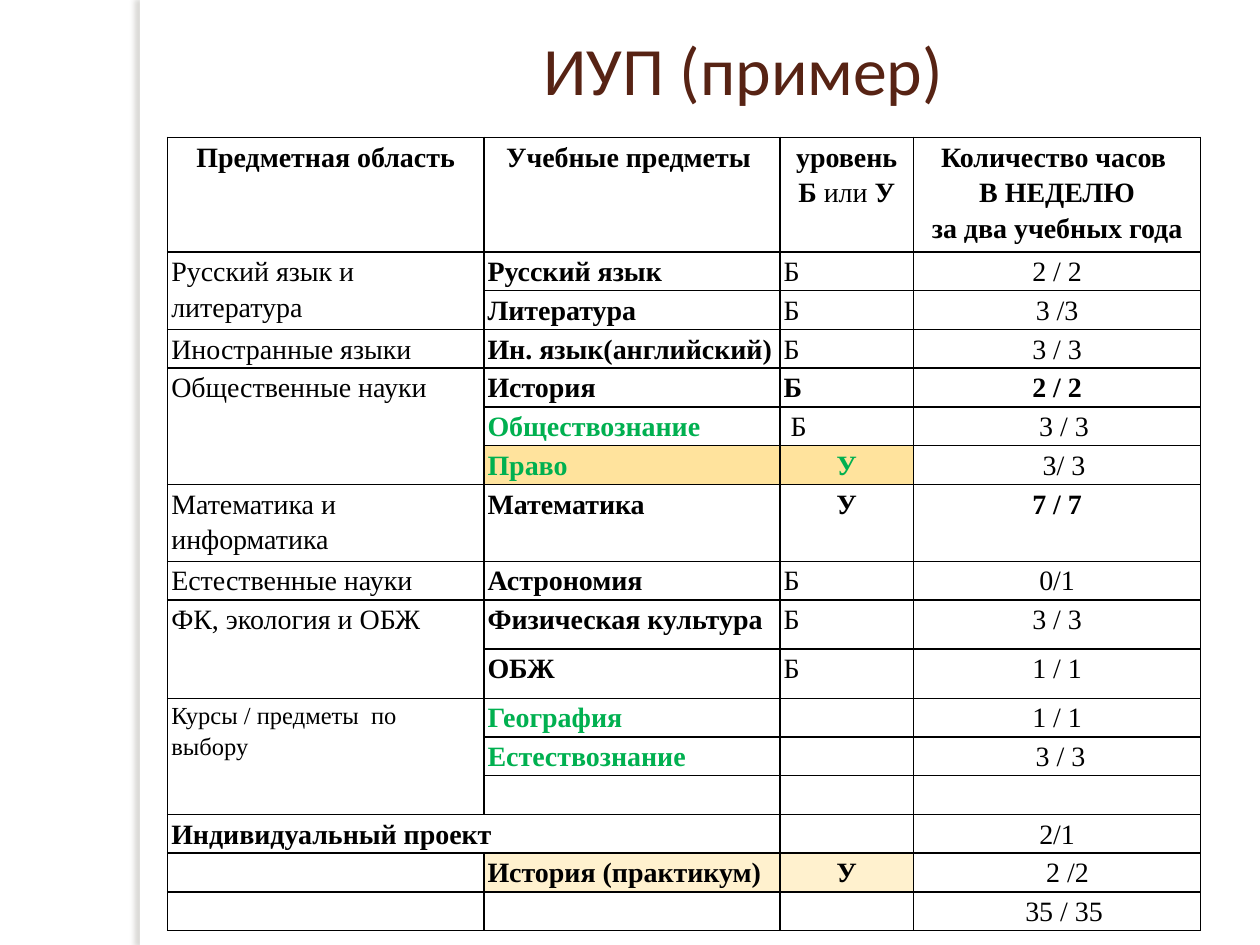
from dataclasses import dataclass
from itertools import product

from lxml.etree import SubElement
from pptx import Presentation
from pptx.dml.color import RGBColor
from pptx.enum.shapes import MSO_SHAPE as Shape
from pptx.enum.text import MSO_ANCHOR as Anchor, PP_ALIGN as Align
from pptx.oxml.ns import qn
from pptx.util import Inches, Pt

COLORS = {
    "black": "000000",
    "white": "FFFFFF",
    "title": "572314",
    "green": "00B050",
    "amber": "FFE39D",
    "cream": "FFF1CE",
    "shadow": "736F63",
}
COLUMN_WIDTHS = (2.51, 2.35, 1.06, 2.28)
TABLE_HEIGHT = 6.3
ROW_COUNT = 17
SPECIAL_ROWS = {0: 0.91, 7: 0.61, 9: 0.39, 10: 0.39}
REGULAR_ROW = (TABLE_HEIGHT - sum(SPECIAL_ROWS.values())) / (ROW_COUNT - len(SPECIAL_ROWS))


@dataclass(frozen=True)
class Entry:
    """Cell content, where asterisks switch bold on and off."""

    text: str = ""
    centered: bool = False
    color: str = "black"
    fill: str | None = None
    size: float = 16
    rows: int = 1
    columns: int = 1


def area(text: str, rows: int = 1, **options) -> Entry:
    """Describe a subject area that may span several rows."""
    return Entry(text, rows=rows, **options)


def subject(text: str, **options) -> Entry:
    """Describe a subject in bold."""
    return Entry(f"*{text}*", **options)


def centered(text: str, **options) -> Entry:
    """Describe a centred cell."""
    return Entry(text, centered=True, **options)


BASIC = Entry("Б")
EMPTY = Entry()
ROWS = (
    (centered("*Предметная область*"), centered("*Учебные предметы *"),
     centered("*уровень*\n*Б *или* У*"),
     centered("*Количество часов *\n*В НЕДЕЛЮ*\n*за два учебных года*")),
    (area("Русский язык и литература", 2), subject("Русский язык"), BASIC, centered("2 / 2")),
    (None, subject("Литература"), BASIC, centered("3 /3")),
    (area("Иностранные языки"), subject("Ин. язык(английский)"), BASIC, centered("3 / 3")),
    (area("Общественные науки", 3), subject("История", fill="white"),
     Entry("*Б*", fill="white"), centered("*2 / 2*")),
    (None, subject("Обществознание", color="green"), Entry(" Б"), centered("  3 / 3")),
    (None, subject("Право", color="green", fill="amber"),
     centered("*У*", color="green", fill="amber"), centered("  3/ 3")),
    (area("Математика и информатика"), subject("Математика"), centered("*У*"), centered("*7 / 7*")),
    (area("Естественные науки"), subject("Астрономия"), BASIC, centered("0/1")),
    (area("ФК, экология и ОБЖ", 2), subject("Физическая культура"), BASIC, centered("3 / 3")),
    (None, subject("ОБЖ"), BASIC, centered("1 / 1")),
    (area("Курсы / предметы  по выбору", 3, size=14), subject("География", color="green"),
     EMPTY, centered("1 / 1")),
    (None, subject("Естествознание", color="green"), EMPTY, centered(" 3 / 3")),
    (None, EMPTY, EMPTY, EMPTY),
    (subject("Индивидуальный проект", columns=2), None, EMPTY, centered("2/1")),
    (EMPTY, subject("История (практикум)", fill="cream"),
     centered("*У*", fill="cream"), centered("   2 /2")),
    (EMPTY, EMPTY, EMPTY, centered("  35 / 35")),
)


def rgb(name: str) -> RGBColor:
    """Look up a named colour."""
    return RGBColor.from_string(COLORS[name])


def add_run(paragraph, text: str, font_name: str, size: float, color: str, bold: bool = False) -> None:
    """Append one formatted run."""
    run = paragraph.add_run()
    run.text = text
    run.font.name = font_name
    run.font.size = Pt(size)
    run.font.bold = bold
    run.font.color.rgb = rgb(color)


def add_panel_edge(slide) -> None:
    """Draw the white strip that casts a soft shadow to the left."""
    strip = slide.shapes.add_shape(Shape.RECTANGLE, Inches(1.11), 0, Inches(0.08), Inches(7.5))
    strip.shadow.inherit = False
    strip.fill.solid()
    strip.fill.fore_color.rgb = rgb("white")
    strip.line.fill.background()
    effects = strip._element.spPr.find(qn("a:effectLst"))
    shadow = SubElement(effects, qn("a:outerShdw"), blurRad=str(Pt(3)), dist=str(Pt(3)),
                        dir="10800000", algn="tl", rotWithShape="0")
    color = SubElement(shadow, qn("a:srgbClr"), val=COLORS["shadow"])
    SubElement(color, qn("a:alpha"), val="25000")


def add_title(slide, text: str) -> None:
    """Add the centred slide title."""
    box = slide.shapes.add_textbox(Inches(1.8), Inches(0.3), Inches(8.2), Inches(0.48))
    frame = box.text_frame
    frame.word_wrap = True
    frame.vertical_anchor = Anchor.MIDDLE
    paragraph = frame.paragraphs[0]
    paragraph.alignment = Align.CENTER
    add_run(paragraph, text, "Calibri", 38.7, "title")


def format_cell(cell) -> None:
    """Give a cell narrow margins, thin black borders and no fill."""
    cell.margin_left = cell.margin_right = Inches(0.03)
    cell.margin_top = cell.margin_bottom = 0
    properties = cell._tc.get_or_add_tcPr()
    for side in ("lnL", "lnR", "lnT", "lnB"):
        line = SubElement(properties, qn(f"a:{side}"), w=str(Pt(1)))
        fill = SubElement(line, qn("a:solidFill"))
        SubElement(fill, qn("a:srgbClr"), val=COLORS["black"])
    cell.fill.background()


def fill_cell(cell, entry: Entry) -> None:
    """Write the text of an entry and apply its fill."""
    if entry.fill:
        cell.fill.solid()
        cell.fill.fore_color.rgb = rgb(entry.fill)
    if not entry.text:
        return
    frame = cell.text_frame
    for number, line in enumerate(entry.text.split("\n")):
        paragraph = frame.add_paragraph() if number else frame.paragraphs[0]
        paragraph.alignment = Align.CENTER if entry.centered else Align.LEFT
        paragraph.line_spacing = 1.15
        for index, part in enumerate(line.split("*")):
            if part:
                add_run(paragraph, part, "Times New Roman", entry.size, entry.color, index % 2 == 1)


def add_curriculum(slide) -> None:
    """Build the curriculum table."""
    table = slide.shapes.add_table(ROW_COUNT, len(COLUMN_WIDTHS), Inches(1.33), Inches(1.09),
                                   Inches(sum(COLUMN_WIDTHS)), Inches(TABLE_HEIGHT)).table
    table.first_row = table.horz_banding = False
    for column, width in zip(table.columns, COLUMN_WIDTHS):
        column.width = Inches(width)
    for index, row in enumerate(table.rows):
        row.height = Inches(SPECIAL_ROWS.get(index, REGULAR_ROW))
    for row, column in product(range(ROW_COUNT), range(len(COLUMN_WIDTHS))):
        cell = table.cell(row, column)
        format_cell(cell)
        entry = ROWS[row][column]
        if entry is None:
            continue
        if entry.rows > 1 or entry.columns > 1:
            cell.merge(table.cell(row + entry.rows - 1, column + entry.columns - 1))
        fill_cell(cell, entry)


def main() -> None:
    """Create the presentation."""
    presentation = Presentation()
    presentation.slide_width = Inches(10)
    presentation.slide_height = Inches(7.5)
    slide = presentation.slides.add_slide(presentation.slide_layouts[6])
    add_panel_edge(slide)
    add_curriculum(slide)
    add_title(slide, "ИУП (пример)")
    presentation.save("out.pptx")


if __name__ == "__main__":
    main()
